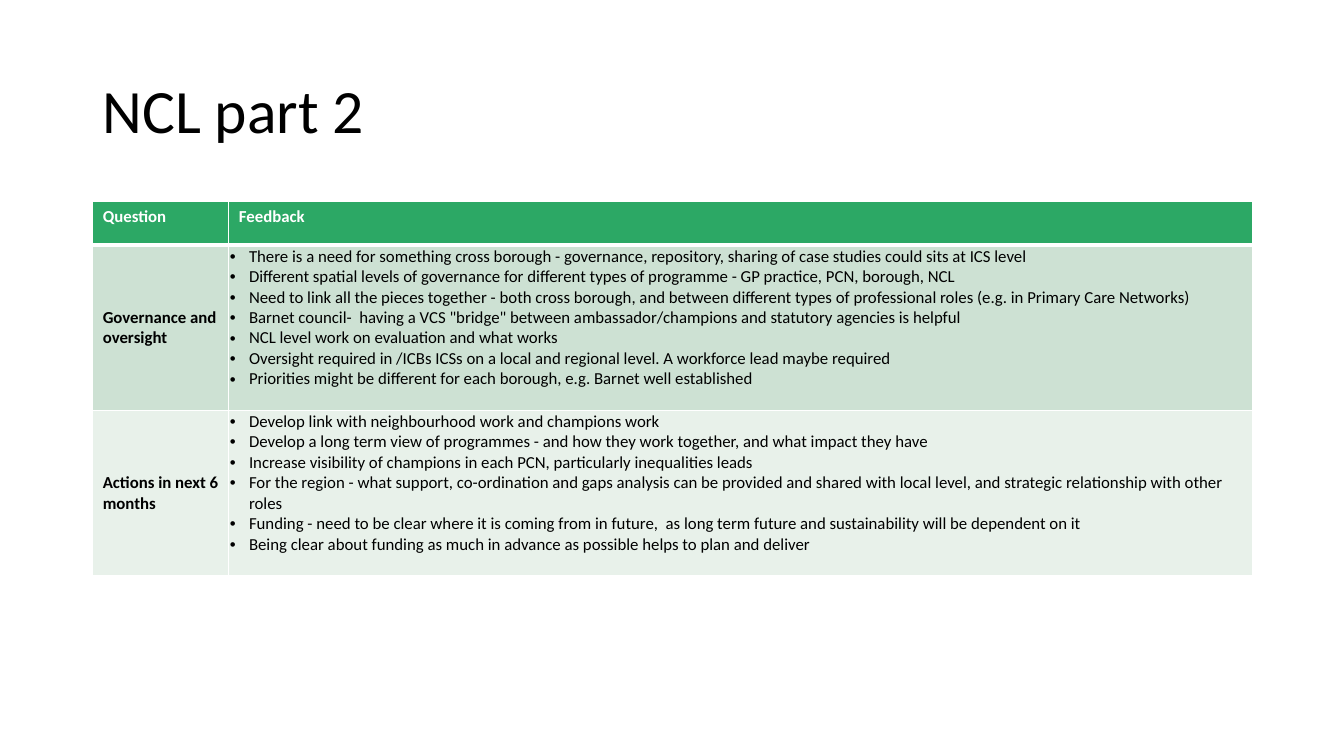
from lxml import etree
from pptx import Presentation
from pptx.dml.color import RGBColor
from pptx.enum.text import MSO_ANCHOR
from pptx.oxml.ns import qn
from pptx.util import Inches, Pt

MIDDLE, TOP = MSO_ANCHOR.MIDDLE, MSO_ANCHOR.TOP
BLACK = RGBColor(0x00, 0x00, 0x00)
WHITE = RGBColor(0xFF, 0xFF, 0xFF)
GREEN = RGBColor(0x2C, 0xA8, 0x65)
SAGE = RGBColor(0xCD, 0xE1, 0xD3)
MIST = RGBColor(0xE8, 0xF1, 0xEA)

WIDE, HIGH = 13.33, 7.5
LEFT, SPAN = 0.069, 0.863  # shares of the slide's width
COLS = (0.1013, 0.7617)
ROWS = (0.0573, 0.2187, 0.2187)  # shares of the slide's height
INDENT = Inches(0.19)

TOPICS = [
    ("Governance and oversight", SAGE, [
        "There is a need for something cross borough - governance, repository, "
        "sharing of case studies could sits at ICS level",
        "Different spatial levels of governance for different types of programme - "
        "GP practice, PCN, borough, NCL",
        "Need to link all the pieces together - both cross borough, and between "
        "different types of professional roles (e.g. in Primary Care Networks)",
        "Barnet council-  having a VCS \"bridge\" between ambassador/champions and "
        "statutory agencies is helpful",
        "NCL level work on evaluation and what works",
        "Oversight required in /ICBs ICSs on a local and regional level. "
        "A workforce lead maybe required",
        "Priorities might be different for each borough, e.g. Barnet well established",
    ]),
    ("Actions in next 6 months", MIST, [
        "Develop link with neighbourhood work and champions work",
        "Develop a long term view of programmes - and how they work together, "
        "and what impact they have",
        "Increase visibility of champions in each PCN, particularly inequalities leads",
        "For the region - what support, co-ordination and gaps analysis can be provided "
        "and shared with local level, and strategic relationship with other roles",
        "Funding - need to be clear where it is coming from in future,  as long term "
        "future and sustainability will be dependent on it",
        "Being clear about funding as much in advance as possible helps to plan and deliver",
    ]),
]


class Deck:
    """Holds the font and the current slide; places take shares of its size."""

    def __init__(self, font):
        self.font = font
        self.show = Presentation()
        self.show.slide_width = Inches(WIDE)
        self.show.slide_height = Inches(HIGH)
        self.slide = self.show.slides.add_slide(self.show.slide_layouts[6])

    def box(self, left, top, width, height):
        return (Inches(left * WIDE), Inches(top * HIGH),
                Inches(width * WIDE), Inches(height * HIGH))

    def style(self, para, size, color, bold=False):
        para.font.name = self.font
        para.font.size = Pt(size)
        para.font.bold = bold
        para.font.color.rgb = color

    def title(self, text, *place):
        frame = self.slide.shapes.add_textbox(*self.box(*place)).text_frame
        frame.word_wrap = True
        frame.vertical_anchor = MIDDLE
        frame.text = text
        para = frame.paragraphs[0]
        para.line_spacing = 0.9
        self.style(para, 44, BLACK)

    def table(self, left, top, cols, rows):
        place = self.box(left, top, sum(cols), sum(rows))
        table = self.slide.shapes.add_table(len(rows), len(cols), *place).table
        for col, share in zip(table.columns, cols):
            col.width = Inches(share * WIDE)
        for row, share in zip(table.rows, rows):
            row.height = Inches(share * HIGH)
        return table

    def cell(self, cell, lines, fill, color=BLACK, bold=True, anchor=TOP,
             bullet=False, above=1, below=1):
        cell.fill.solid()
        cell.fill.fore_color.rgb = fill
        cell.vertical_anchor = anchor
        cell.text = "\n".join(lines)
        for para in cell.text_frame.paragraphs:
            if bullet:
                self.bullet(para)
            self.style(para, 12, color, bold)
        if bullet:
            cell.margin_left = cell.margin_right = cell.margin_top = Inches(0.01)
            cell.margin_bottom = 0
        self.border(cell, (1, 1, above, below))

    def bullet(self, para):
        props = para._p.get_or_add_pPr()
        props.set("marL", str(INDENT))
        props.set("indent", str(-INDENT))
        etree.SubElement(props, qn("a:buFont")).set("typeface", "Arial")
        etree.SubElement(props, qn("a:buChar")).set("char", "•")

    def border(self, cell, widths):
        """Draw white edges; widths run left, right, top, bottom."""
        props = cell._tc.get_or_add_tcPr()
        for spot, (side, width) in enumerate(zip("LRTB", widths)):
            line = etree.Element(qn("a:ln" + side), w=str(Pt(width)))
            fill = etree.SubElement(line, qn("a:solidFill"))
            etree.SubElement(fill, qn("a:srgbClr")).set("val", str(WHITE))
            props.insert(spot, line)


def main():
    deck = Deck("Calibri")
    deck.title("NCL part 2", LEFT, 0.053, SPAN, 0.193)
    table = deck.table(LEFT, 0.267, COLS, ROWS)
    for col, head in enumerate(("Question", "Feedback")):
        deck.cell(table.cell(0, col), [head], GREEN, WHITE, below=3)
    for row, (topic, fill, points) in enumerate(TOPICS, 1):
        above = 3 if row == 1 else 1
        deck.cell(table.cell(row, 0), [topic], fill, anchor=MIDDLE, above=above)
        deck.cell(table.cell(row, 1), points, fill, bold=False, bullet=True, above=above)
    deck.show.save("out.pptx")


if __name__ == "__main__":
    main()
